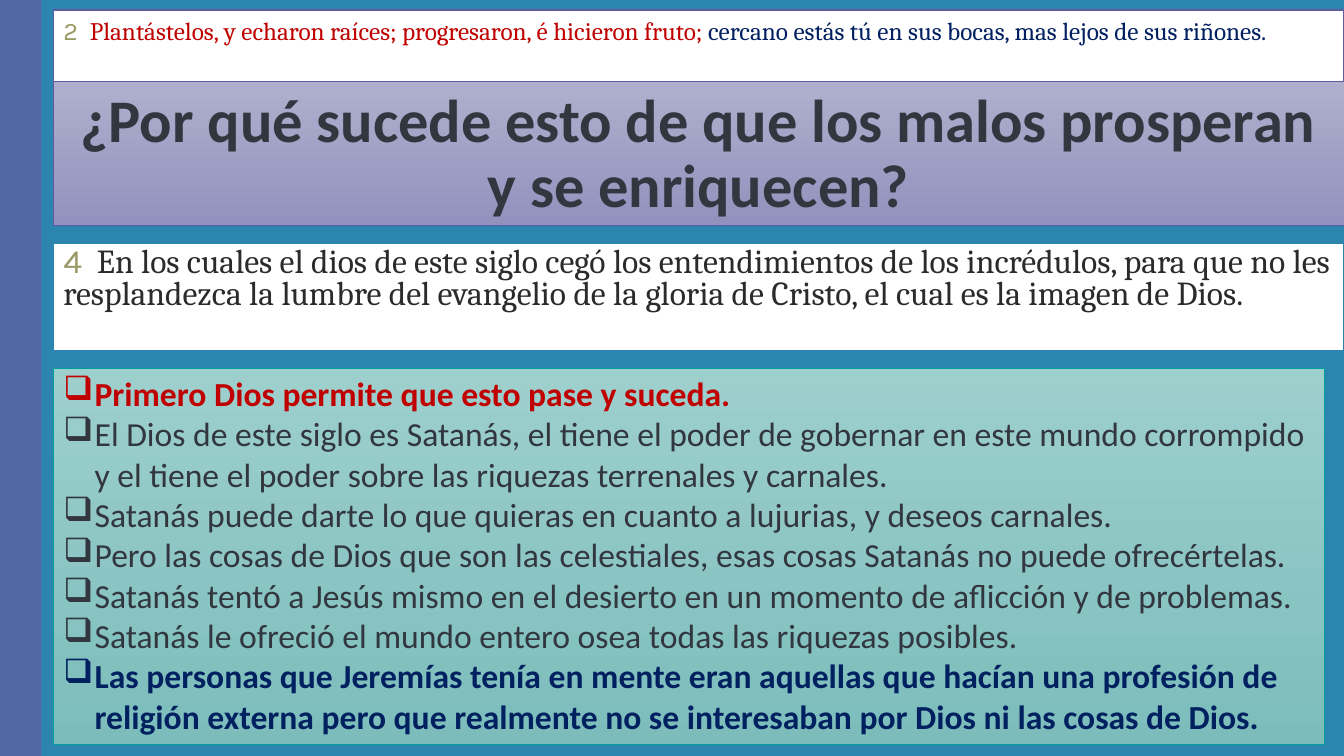
from lxml import etree
from pptx import Presentation
from pptx import util as u
from pptx.dml.color import RGBColor
from pptx.enum import shapes, text
from pptx.oxml import ns

WIDTH, HEIGHT = 13.33, 7.5
LEFT = 0.53
FULL = WIDTH - LEFT

WHITE = RGBColor(0xFF, 0xFF, 0xFF)
BLUE = RGBColor(0x2C, 0x85, 0xAE)
INDIGO = RGBColor(0x52, 0x68, 0xA5)
PURPLE = RGBColor(0x5E, 0x5C, 0xA2)
LILAC = RGBColor(0xAF, 0xAF, 0xCD)
MAUVE = RGBColor(0x93, 0x92, 0xBE)
TEAL = RGBColor(0x00, 0xA0, 0x9D)
MINT = RGBColor(0x9D, 0xCF, 0xCD)
SEA = RGBColor(0x7C, 0xBD, 0xBB)
OLIVE = RGBColor(0x99, 0x99, 0x66)
SLATE = RGBColor(0x32, 0x36, 0x3F)
BLACK = RGBColor(0x2B, 0x2B, 0x2B)
RED = RGBColor(0xC0, 0x00, 0x00)
NAVY = RGBColor(0x00, 0x20, 0x60)

POINTS = [
    ("Primero Dios permite que esto pase y suceda.", RED, True),
    ("El Dios de este siglo es Satanás, el tiene el poder de gobernar en este mundo "
     "corrompido y el tiene el poder sobre las riquezas terrenales y carnales.", SLATE, False),
    ("Satanás puede darte lo que quieras en cuanto a lujurias, y deseos carnales.", SLATE, False),
    ("Pero las cosas de Dios que son las celestiales, esas cosas Satanás no puede "
     "ofrecértelas.", SLATE, False),
    ("Satanás tentó a Jesús mismo en el desierto en un momento de aflicción y de "
     "problemas.", SLATE, False),
    ("Satanás le ofreció el mundo entero osea todas las riquezas posibles.", SLATE, False),
    ("Las personas que Jeremías tenía en mente eran aquellas que hacían una profesión de "
     "religión externa pero que realmente no se interesaban por Dios ni las cosas de Dios.",
     NAVY, True),
]


def add_panel(s, box, colors, line=None, weight=1):
    """Add a rectangle with a solid or vertical gradient fill."""
    sp = s.shapes.add_shape(shapes.MSO_SHAPE.RECTANGLE, *(u.Inches(v) for v in box))
    sp.shadow.inherit = False
    if len(colors) == 1:
        sp.fill.solid()
        sp.fill.fore_color.rgb = colors[0]
    else:
        sp.fill.gradient()
        sp.fill.gradient_angle = 270
        for stop, color in zip(sp.fill.gradient_stops, colors):
            stop.color.rgb = color
    if line is None:
        sp.line.fill.background()
    else:
        sp.line.color.rgb = line
        sp.line.width = u.Pt(weight)
    tf = sp.text_frame
    tf.word_wrap = True
    tf.vertical_anchor = text.MSO_ANCHOR.TOP
    tf.paragraphs[0].alignment = text.PP_ALIGN.LEFT
    return sp


def add_run(p, words, size, font, color, bold=False):
    """Append a formatted run to a paragraph."""
    r = p.add_run()
    r.text = words
    r.font.size, r.font.name, r.font.bold = u.Pt(size), font, bold
    r.font.color.rgb = color


def add_backdrop(s, box):
    """Fill the box with the blue ground and its left band."""
    x, y, w, h = box
    add_panel(s, box, [BLUE])
    add_panel(s, (x, y, 0.41, h), [INDIGO])


def add_title(s, box):
    """Place the question banner."""
    tf = add_panel(s, box, [LILAC, MAUVE], PURPLE, 0.5).text_frame
    tf.vertical_anchor = text.MSO_ANCHOR.BOTTOM
    p = tf.paragraphs[0]
    p.alignment = text.PP_ALIGN.CENTER
    p.line_spacing = 0.9
    add_run(p, "¿Por qué sucede esto de que los malos prosperan y se enriquecen?",
            43.2, "Calibri", SLATE, True)


def add_verse(s, box, line, size, number, parts):
    """Place a numbered verse on white and return its paragraph."""
    p = add_panel(s, box, [WHITE], line).text_frame.paragraphs[0]
    add_run(p, number, size, "Karla", OLIVE)
    for words, color in parts:
        add_run(p, words, size, "Cambria", color)
    return p


def add_points(s, box):
    """Place the bulleted answers."""
    tf = add_panel(s, box, [MINT, SEA], TEAL, 0.5).text_frame
    for i, (words, color, bold) in enumerate(POINTS):
        p = tf.add_paragraph() if i else tf.paragraphs[0]
        p.alignment = text.PP_ALIGN.LEFT
        add_run(p, words, 24, "Calibri", color, bold)
        pPr = p._p.get_or_add_pPr()
        pPr.set("marL", str(u.Inches(0.31)))
        pPr.set("indent", str(-u.Inches(0.31)))
        etree.SubElement(pPr, ns.qn("a:buChar")).set("char", "❑")


def main():
    """Build and save the slide."""
    prs = Presentation()
    prs.slide_width, prs.slide_height = u.Inches(WIDTH), u.Inches(HEIGHT)
    s = prs.slides.add_slide(prs.slide_layouts[6])
    add_backdrop(s, (0, 0, WIDTH, HEIGHT))
    add_title(s, (LEFT, 0.8, FULL, 1.44))
    p = add_verse(s, (LEFT, 2.41, FULL, 1.07), BLUE, 24, "4", [
        ("  En los cuales el dios de este siglo cegó los entendimientos de los incrédulos, "
         "para que no les resplandezca la lumbre del evangelio de la gloria de Cristo, "
         "el cual es la imagen de Dios.", BLACK)])
    p.line_spacing = 0.8
    p.space_before = u.Pt(10)
    add_verse(s, (LEFT, 0.1, FULL, 0.71), PURPLE, 18, "2  ", [
        ("Plantástelos, y echaron raíces; progresaron, é hicieron fruto; ", RED),
        ("cercano estás tú en sus bocas, mas lejos de sus riñones.", NAVY)])
    add_points(s, (LEFT, 3.65, 12.61, 3.74))
    prs.save("out.pptx")


if __name__ == "__main__":
    main()
